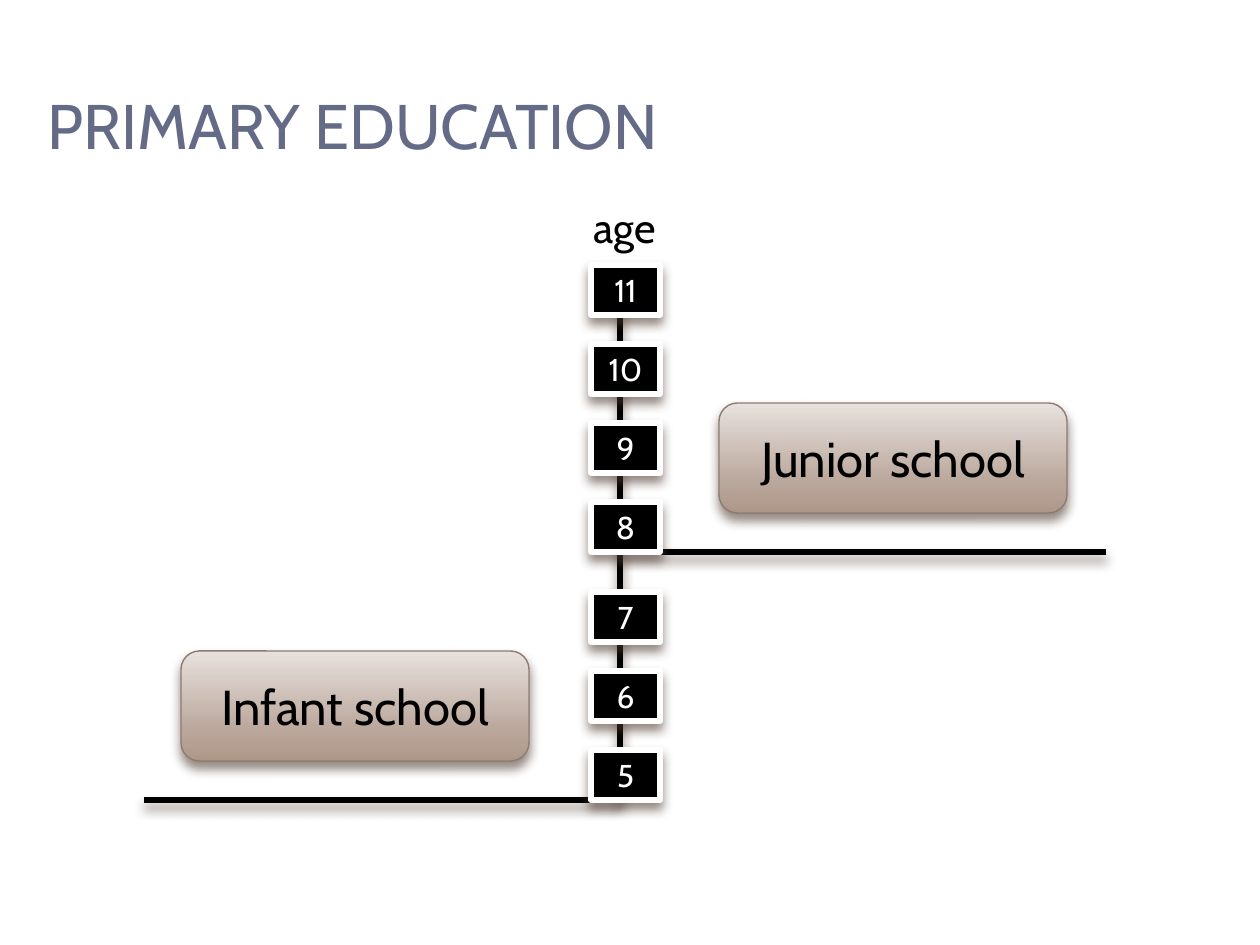
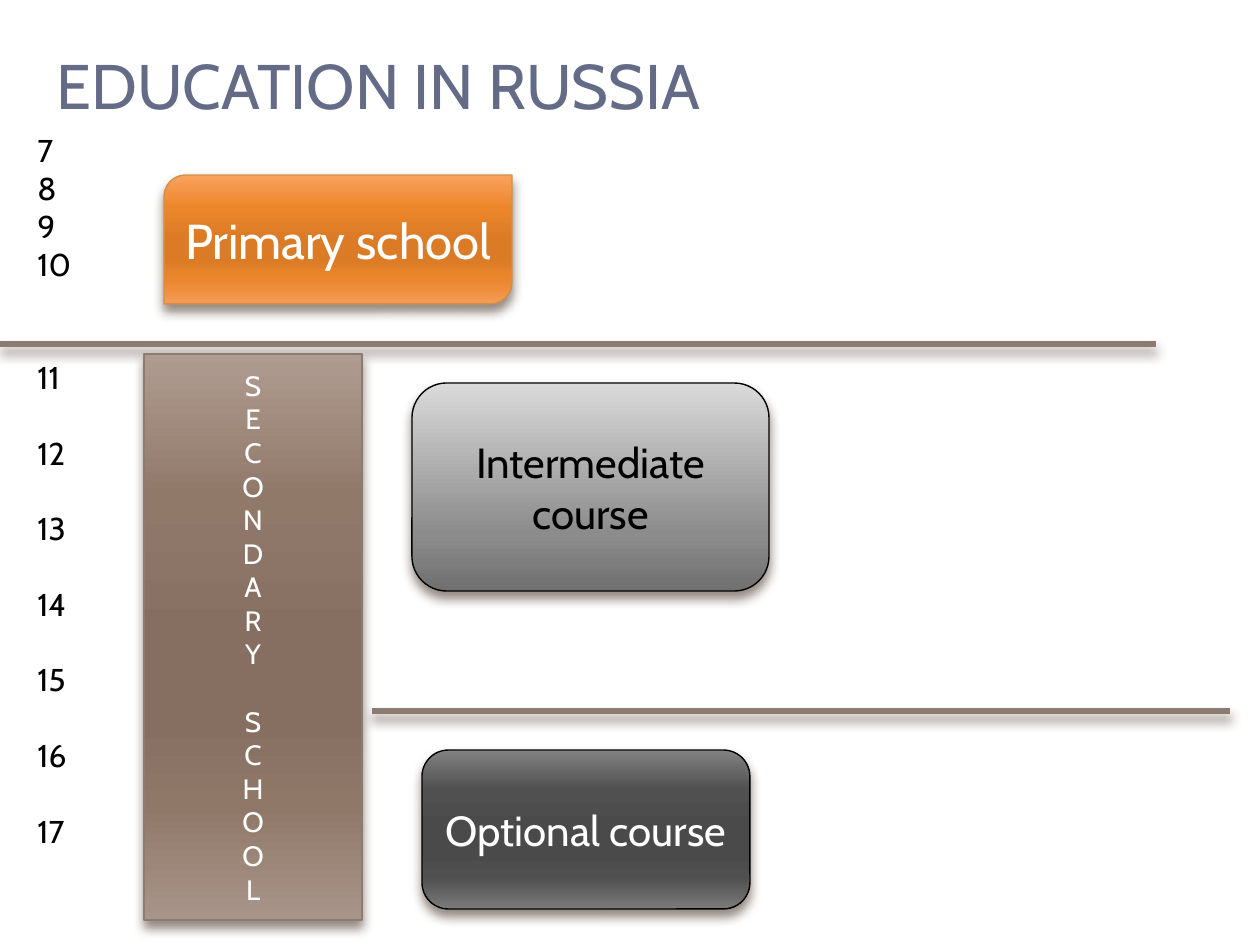
from dataclasses import dataclass
from typing import NamedTuple

from lxml import etree
from pptx import Presentation
from pptx.dml.color import RGBColor
from pptx.enum.shapes import MSO_CONNECTOR, MSO_SHAPE
from pptx.enum.text import MSO_ANCHOR, PP_ALIGN
from pptx.oxml.ns import qn
from pptx.util import Pt

EMU_PER_PX = 914400 / 126
TITLE_ONLY = 5
LEFT, CENTER = PP_ALIGN.LEFT, PP_ALIGN.CENTER
TOP, MIDDLE = MSO_ANCHOR.TOP, MSO_ANCHOR.MIDDLE
RECTANGLE = MSO_SHAPE.RECTANGLE
ROUNDED = MSO_SHAPE.ROUNDED_RECTANGLE
DIAGONAL = MSO_SHAPE.ROUND_2_DIAG_RECTANGLE
PROCESS = MSO_SHAPE.FLOWCHART_PROCESS
STRAIGHT = MSO_CONNECTOR.STRAIGHT


@dataclass(frozen=True)
class Theme:
    font: str = "Cabin"
    title: str = "646B86"
    black: str = "000000"
    white: str = "FFFFFF"
    brown: str = "8C7B70"
    amber: str = "D19049"
    shadow: str = "4E3B30"
    pale_fill: tuple = ((0, "E7E1DD"), (72, "BAA79C"), (100, "AE9788"))
    grey_fill: tuple = ((0, "DADADA"), (72, "8C8C8C"), (100, "707070"))
    orange_fill: tuple = ((0, "FAA25F"), (25, "EC862B"), (50, "DB7B26"),
                          (65, "DB7B26"), (80, "EA852B"), (100, "F59C57"))
    brown_fill: tuple = ((0, "AF9C90"), (25, "91796A"), (50, "866F61"),
                         (65, "866F61"), (80, "907869"), (100, "A89589"))
    dark_fill: tuple = ((0, "828282"), (25, "505050"), (50, "4A4A4A"),
                        (65, "4A4A4A"), (80, "505050"), (100, "7A7A7A"))
    title_size: int = 36
    school_size: int = 28
    course_size: int = 24
    age_size: int = 18
    letter_size: int = 16
    line_height: float = 1.2
    thin: float = 0.79
    thick: float = 3


THEME = Theme()


class Box(NamedTuple):
    left: int
    top: int
    width: int
    height: int

    def inner(self, left, top, width, height):
        return Box(self.left + left, self.top + top, width, height)


def px(length):
    return round(length * EMU_PER_PX)


def emu(box):
    return [px(length) for length in box]


def write_text(frame, lines, size, color=THEME.black, align=LEFT,
               anchor=MIDDLE, gaps=None):
    frame.word_wrap = True
    frame.vertical_anchor = anchor
    for index, line in enumerate(lines):
        para = frame.paragraphs[0] if index == 0 else frame.add_paragraph()
        para.alignment = align
        blank_lines = (gaps or {}).get(index, 0)
        if blank_lines:
            para.space_before = Pt(blank_lines * size * THEME.line_height)
        span = para.add_run()
        span.text = line
        span.font.name = THEME.font
        span.font.size = Pt(size)
        span.font.color.rgb = RGBColor.from_string(color)


def add_color(parent, color):
    return etree.SubElement(parent, qn("a:srgbClr"), val=color)


def add_shadow(item):
    effects = etree.SubElement(item.element.spPr, qn("a:effectLst"))
    shadow = etree.SubElement(effects, qn("a:outerShdw"), blurRad=str(Pt(6)),
                              dist=str(Pt(4)), dir="5400000", rotWithShape="0")
    etree.SubElement(add_color(shadow, THEME.shadow), qn("a:alpha"), val="60000")


def set_line(item, color, width):
    item.line.color.rgb = RGBColor.from_string(color)
    item.line.width = Pt(width)


def fill_gradient(shape, stops):
    shape.fill.gradient()
    shape.fill.gradient_angle = 270
    stop_list = next(shape.element.spPr.iter(qn("a:gsLst")))
    for stop in list(stop_list):
        stop_list.remove(stop)
    for position, color in stops:
        add_color(etree.SubElement(stop_list, qn("a:gs"), pos=str(position * 1000)), color)


def add_block(page, box, kind, fill, lines, size, color=THEME.white,
              border=THEME.brown, border_width=THEME.thin, gaps=None):
    shape = page.shapes.add_shape(kind, *emu(box))
    if isinstance(fill, str):
        shape.fill.solid()
        shape.fill.fore_color.rgb = RGBColor.from_string(fill)
    else:
        fill_gradient(shape, fill)
    set_line(shape, border, border_width)
    add_shadow(shape)
    write_text(shape.text_frame, lines, size, color=color, align=CENTER, gaps=gaps)


def add_rule(page, start, end, color):
    rule = page.shapes.add_connector(STRAIGHT, *emu(start + end))
    set_line(rule, color, THEME.thick)
    add_shadow(rule)


def add_label(page, box, lines, size, gaps=None):
    label = page.shapes.add_textbox(*emu(box))
    write_text(label.text_frame, lines, size, anchor=TOP, gaps=gaps)


def add_page(deck, title, box):
    page = deck.slides.add_slide(deck.slide_layouts[TITLE_ONLY])
    holder = page.shapes.title
    holder.left, holder.top, holder.width, holder.height = emu(box)
    write_text(holder.text_frame, [title], THEME.title_size, color=THEME.title)
    return page


def draw_stage(page, box, axis, school, school_left, ages):
    base = box.top + box.height
    add_rule(page, (box.left, base), (box.left + box.width, base), THEME.black)
    for index, age in enumerate(ages):
        age_box = Box(axis - 29, base - 50 - 79 * index, 69, 50)
        add_block(page, age_box, PROCESS, THEME.black, [str(age)], THEME.age_size,
                  border=THEME.white, border_width=THEME.thick)
    add_block(page, box.inner(school_left, box.height - 149, 348, 110), ROUNDED,
              THEME.pale_fill, [school], THEME.school_size, color=THEME.black)


def draw_timeline(page, box):
    axis = box.left + 476
    add_rule(page, (axis, box.top + 70), (axis, box.top + box.height), THEME.black)
    add_label(page, box.inner(437, 0, 110, 63), ["age"], THEME.course_size)
    draw_stage(page, box.inner(0, 357, 476, 248), axis, "Infant school", 37, range(5, 8))
    draw_stage(page, box.inner(476, 70, 486, 287), axis, "Junior school", 99, range(8, 12))


def draw_ages(page, box):
    gaps = {4: 2} | {index: 1 for index in range(5, 11)}
    add_label(page, box, [str(age) for age in range(7, 18)], THEME.age_size, gaps=gaps)


def draw_primary(page, box):
    base = box.top + box.height
    add_rule(page, (box.left, base), (box.left + box.width, base), THEME.brown)
    add_block(page, box.inner(164, 0, 348, 129), DIAGONAL, THEME.orange_fill,
              ["Primary school"], THEME.school_size, border=THEME.amber)


def draw_secondary(page, box):
    first, second = "SECONDARY", "SCHOOL"
    add_block(page, box.inner(0, 0, 218, box.height), RECTANGLE, THEME.brown_fill,
              first + second, THEME.letter_size, gaps={len(first): 1})
    split = box.top + 357
    add_rule(page, (box.left + 228, split), (box.left + box.width, split), THEME.brown)
    courses = (
        ("Intermediate course", box.inner(268, 29, 357, 208), THEME.grey_fill, THEME.black),
        ("Optional course", box.inner(278, 396, 328, 159), THEME.dark_fill, THEME.white),
    )
    for name, course_box, fill, color in courses:
        add_block(page, course_box, ROUNDED, fill, [name], THEME.course_size,
                  color=color, border=THEME.black)


def main():
    deck = Presentation()
    deck.slide_width, deck.slide_height = px(1260), px(945)

    primary = add_page(deck, "PRIMARY EDUCATION", Box(35, 66, 1197, 116))
    draw_timeline(primary, Box(144, 195, 962, 605))

    russia = add_page(deck, "EDUCATION IN RUSSIA", Box(44, 26, 1197, 116))
    draw_ages(russia, Box(25, 125, 89, 814))
    draw_primary(russia, Box(0, 175, 1156, 169))
    draw_secondary(russia, Box(144, 354, 1086, 566))

    deck.save("out.pptx")


if __name__ == "__main__":
    main()
